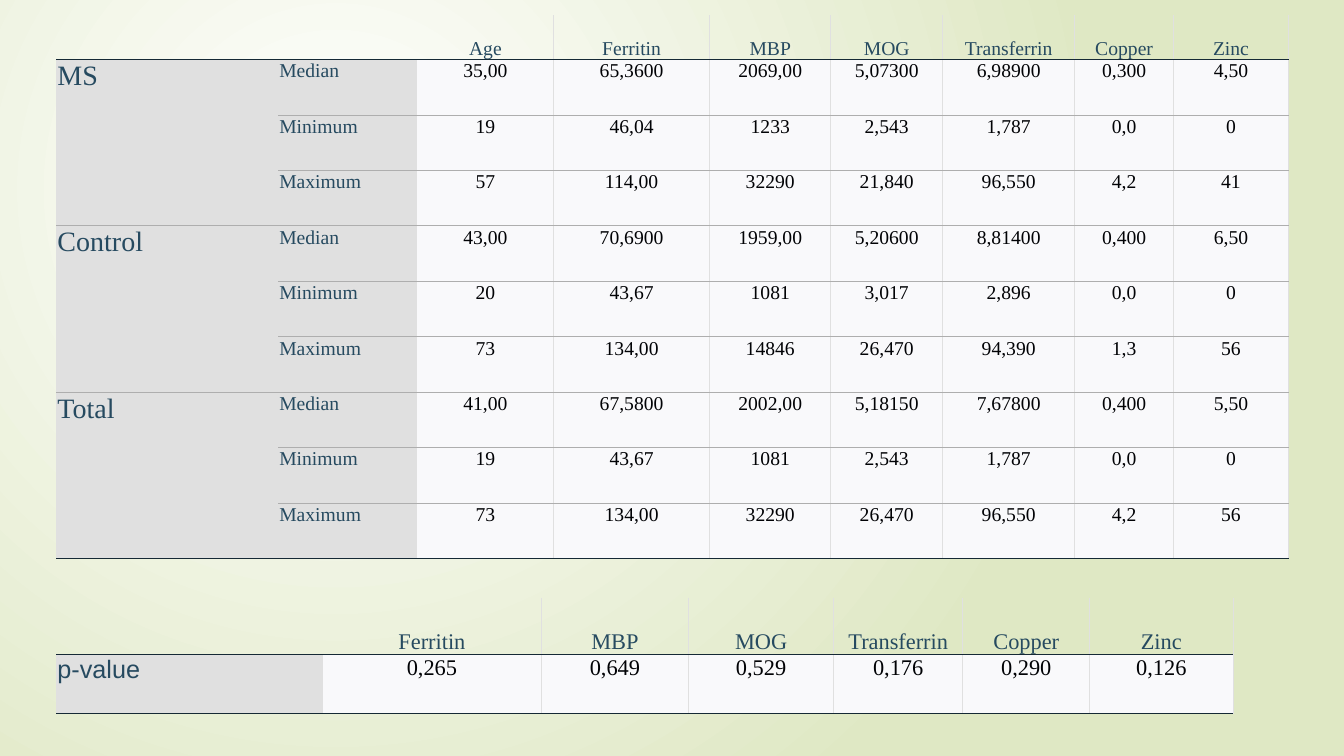
from pptx import Presentation
from pptx.dml.color import RGBColor
from pptx.enum.text import MSO_ANCHOR, PP_ALIGN
from pptx.oxml import parse_xml
from pptx.oxml.ns import nsdecls, qn
from pptx.util import Inches, Pt

COLORS = {
    "white": "FFFFFF", "green": "DFE8C4", "blue": "264A60", "ink": "010205",
    "label": "E0E0E0", "value": "F9F9FB", "rule": "AEAEAE", "dark": "152935",
}
SERIF = "Times New Roman"
PLAIN = "{2D5ABB26-0587-4C30-8999-92F81FD0307C}"  # table style without lines

GROUPS = ["MS", "Control", "Total"]
STATS = ["Median", "Minimum", "Maximum"]
HEADS = ["Age", "Ferritin", "MBP", "MOG", "Transferrin", "Copper", "Zinc"]
VALUES = [
    ["35,00", "65,3600", "2069,00", "5,07300", "6,98900", "0,300", "4,50"],
    ["19", "46,04", "1233", "2,543", "1,787", "0,0", "0"],
    ["57", "114,00", "32290", "21,840", "96,550", "4,2", "41"],
    ["43,00", "70,6900", "1959,00", "5,20600", "8,81400", "0,400", "6,50"],
    ["20", "43,67", "1081", "3,017", "2,896", "0,0", "0"],
    ["73", "134,00", "14846", "26,470", "94,390", "1,3", "56"],
    ["41,00", "67,5800", "2002,00", "5,18150", "7,67800", "0,400", "5,50"],
    ["19", "43,67", "1081", "2,543", "1,787", "0,0", "0"],
    ["73", "134,00", "32290", "26,470", "96,550", "4,2", "56"],
]
TESTS = ["0,265", "0,649", "0,529", "0,176", "0,290", "0,126"]


def set_font(para, size, color, name=SERIF):
    para.font.size = Pt(size)
    para.font.name = name
    para.font.color.rgb = RGBColor.from_string(COLORS[color])


def set_back(slide):
    stops = "".join(
        f'<a:gs pos="{pos}"><a:srgbClr val="{COLORS[key]}"/></a:gs>'
        for pos, key in [(0, "white"), (100000, "green")])
    slide.element.cSld.insert(0, parse_xml(
        f'<p:bg {nsdecls("p", "a")}><p:bgPr><a:gradFill rotWithShape="1">'
        f'<a:gsLst>{stops}</a:gsLst><a:path path="circle">'
        '<a:fillToRect l="50000" t="50000" r="100000" b="100000"/></a:path>'
        '</a:gradFill><a:effectLst/></p:bgPr></p:bg>'))


def add_line(cell, side, color):
    cell._tc.get_or_add_tcPr().append(parse_xml(
        f'<a:ln{side} {nsdecls("a")} w="6350"><a:solidFill>'
        f'<a:srgbClr val="{COLORS[color]}"/></a:solidFill></a:ln{side}>'))


def rule_cell(cell, row, col, labels, last):
    """Light lines between values, grey between rows, dark at the edges."""
    if col > labels:
        add_line(cell, "L", "label")
    if col >= labels:
        add_line(cell, "R", "label")
    if row > 0:
        add_line(cell, "T", "dark" if row == 1 else "rule")
    end = row + cell.span_height - 1
    add_line(cell, "B", "dark" if end in (0, last) else "rule")


def fill_cell(cell, text, row, is_label, font):
    cell.margin_left = cell.margin_top = cell.margin_right = Inches(0.01)
    cell.margin_bottom = 0
    cell.text = text
    para = cell.text_frame.paragraphs[0]
    if not is_label:
        para.alignment = PP_ALIGN.CENTER
    set_font(para, *font)
    if row == 0:
        cell.vertical_anchor = MSO_ANCHOR.BOTTOM
    else:
        cell.fill.solid()
        cell.fill.fore_color.rgb = RGBColor.from_string(
            COLORS["label" if is_label else "value"])


def add_grid(slide, top, widths, heights, rows, labels, size, lead):
    """Draw a table; lead is the font of its first column."""
    table = slide.shapes.add_table(
        len(rows), len(widths), Inches(0.56), Inches(top),
        Inches(sum(widths)), Inches(sum(heights))).table
    table.first_row = table.horz_banding = False
    table._tbl.tblPr.find(qn("a:tableStyleId")).text = PLAIN
    for column, width in zip(table.columns, widths):
        column.width = Inches(width)
    for line, height in zip(table.rows, heights):
        line.height = Inches(height)
    # Join the rows of each group
    if labels == 2:
        step = len(STATS)
        for row in range(1, len(rows), step):
            table.cell(row, 0).merge(table.cell(row + step - 1, 0))
    for row, texts in enumerate(rows):
        for col, text in enumerate(texts):
            cell = table.cell(row, col)
            if cell.is_spanned:
                continue
            is_label = col < labels
            tone = "blue" if row == 0 or is_label else "ink"
            font = lead if row and col == 0 else (size, tone)
            rule_cell(cell, row, col, labels, len(rows) - 1)
            fill_cell(cell, text, row, is_label, font)


def main():
    deck = Presentation()
    deck.slide_width, deck.slide_height = Inches(13.33), Inches(7.5)
    slide = deck.slides.add_slide(deck.slide_layouts[6])
    set_back(slide)

    # Statistics by group; a group's name stands in its first row only
    names = [[group if stat == STATS[0] else "", stat]
             for group in GROUPS for stat in STATS]
    body = [name + value for name, value in zip(names, VALUES)]
    add_grid(slide, 0.15, [2.2, 1.38, 1.35, 1.55, 1.2, 1.11, 1.31, 0.98, 1.14],
             [0.44] + [0.55] * len(body), [["", ""] + HEADS] + body,
             2, 14, (20, "blue"))

    # Test results
    add_grid(slide, 5.93, [2.64, 2.17, 1.46, 1.44, 1.28, 1.26, 1.42],
             [0.56, 0.59], [[""] + HEADS[1:], ["p-value"] + TESTS],
             1, 16, (18, "blue", "Arial"))
    deck.save("out.pptx")


if __name__ == "__main__":
    main()
